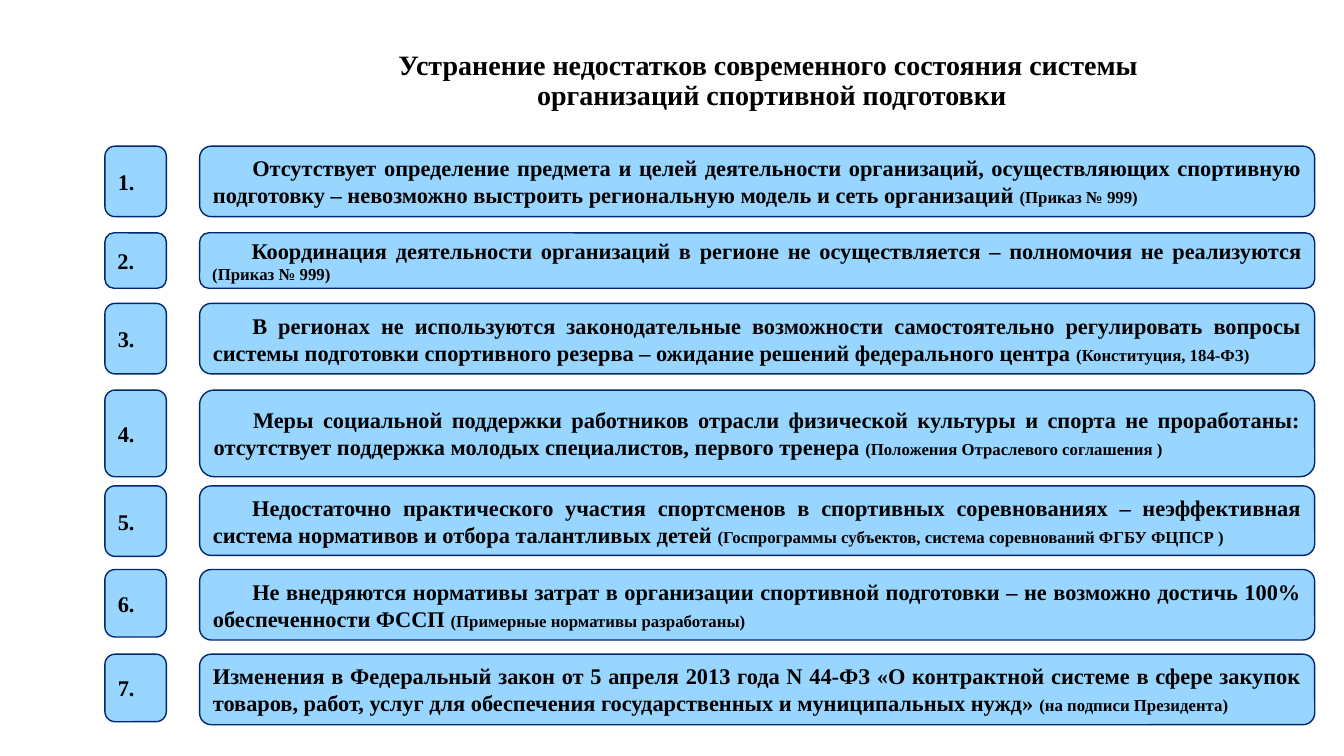
from pptx import Presentation
from pptx.dml.color import RGBColor
from pptx.enum.shapes import MSO_SHAPE
from pptx.enum.text import MSO_ANCHOR, PP_ALIGN
from pptx.util import Emu, Pt

PX = 9144
THEME = {
    "fill": RGBColor.from_string("99D6FF"),
    "line": RGBColor.from_string("002671"),
    "text": RGBColor.from_string("000000"),
    "font": "Times New Roman",
    "title": Pt(20),
    "body": Pt(16),
    "source": Pt(12),
}
NUMBER_LEFT, NUMBER_WIDTH = 104, 61
ISSUE_LEFT, ISSUE_WIDTH = 198, 1106
INDENT = 39

ISSUES = [
    (145, 70, 70, INDENT,
     "Отсутствует определение предмета и целей деятельности организаций, осуществляющих спортивную подготовку – невозможно выстроить региональную модель и сеть организаций ",
     "(Приказ № 999)"),
    (231, 55, 55, INDENT,
     "Координация деятельности организаций в регионе не осуществляется – полномочия не реализуются ",
     "(Приказ № 999)"),
    (301, 70, 70, INDENT,
     "В регионах не используются законодательные возможности самостоятельно регулировать вопросы системы подготовки спортивного резерва – ожидание решений федерального центра ",
     "(Конституция, 184-ФЗ)"),
    (387, 86, 86, INDENT,
     "Меры социальной поддержки работников отрасли физической культуры и спорта не проработаны: отсутствует поддержка молодых специалистов, первого тренера ",
     "(Положения Отраслевого соглашения )"),
    (482, 70, 69, INDENT,
     "Недостаточно практического участия спортсменов в спортивных соревнованиях – неэффективная система нормативов и отбора талантливых детей ",
     "(Госпрограммы субъектов, система соревнований ФГБУ ФЦПСР )"),
    (565, 67, 70, INDENT,
     "Не внедряются нормативы затрат в организации спортивной подготовки – не возможно достичь 100% обеспеченности ФССП ",
     "(Примерные нормативы разработаны)"),
    (649, 67, 70, 0,
     "Изменения в Федеральный закон от 5 апреля 2013 года N 44-ФЗ «О контрактной системе в сфере закупок товаров, работ, услуг для обеспечения государственных и муниципальных нужд» ",
     "(на подписи Президента)"),
]


def write(sp, runs, align, indent=0):
    tf = sp.text_frame
    tf.word_wrap = True
    tf.vertical_anchor = MSO_ANCHOR.MIDDLE
    p = tf.paragraphs[0]
    p.alignment = align
    if indent:
        p._p.get_or_add_pPr().set("indent", str(indent * PX))
    for text, size in runs:
        r = p.add_run()
        r.text = text
        r.font.color.rgb = THEME["text"]
        for name, value in {"name": THEME["font"], "size": size, "bold": True}.items():
            setattr(r.font, name, value)
    return p


def add_box(left, top, width, height, runs, indent=0):
    sp = s.shapes.add_shape(MSO_SHAPE.ROUNDED_RECTANGLE, *[Emu(v * PX) for v in (left, top, width, height)])
    sp.shadow.inherit = False
    sp.fill.solid()
    sp.fill.fore_color.rgb = THEME["fill"]
    sp.line.color.rgb = THEME["line"]
    sp.line.width = Pt(1)
    write(sp, runs, PP_ALIGN.JUSTIFY, indent)


prs = Presentation()
prs.slide_width, prs.slide_height = Emu(1333 * PX), Emu(750 * PX)
s = prs.slides.add_slide(prs.slide_layouts[6])

title = s.shapes.add_textbox(*[Emu(v * PX) for v in (198, 39, 1135, 84)])
heading = "Устранение недостатков современного состояния системы \vорганизаций спортивной подготовки"
p = write(title, [], PP_ALIGN.CENTER)
p.line_spacing = 0.9
p.text = heading
for r in p.runs:
    r.font.color.rgb = THEME["text"]
    for name, value in {"name": THEME["font"], "size": THEME["title"], "bold": True}.items():
        setattr(r.font, name, value)

for number, (top, number_height, issue_height, indent, issue, source) in enumerate(ISSUES, 1):
    add_box(ISSUE_LEFT, top, ISSUE_WIDTH, issue_height,
            [(issue, THEME["body"]), (source, THEME["source"])], indent)
    add_box(NUMBER_LEFT, top, NUMBER_WIDTH, number_height, [(f"{number}.", THEME["body"])])

prs.save("out.pptx")
